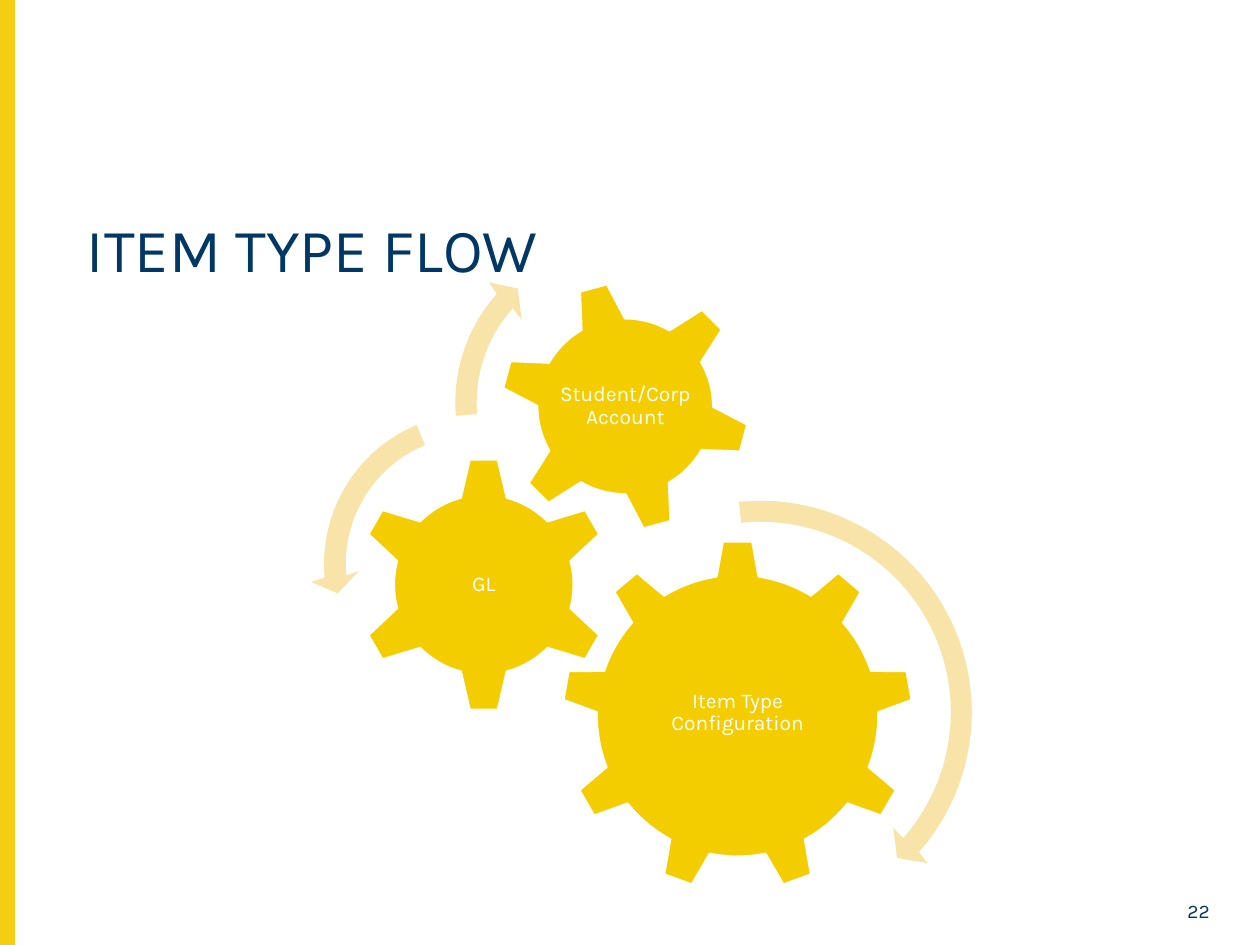
import math

import lxml.etree
import pptx
import pptx.util
import pptx.dml.color
import pptx.enum.shapes
import pptx.enum.text
import pptx.oxml.ns

Pt = pptx.util.Pt
Align = pptx.enum.text.PP_ALIGN
Anchor = pptx.enum.text.MSO_ANCHOR
qn = pptx.oxml.ns.qn

FONT = "Karla"
COLORS = {"bar": "F4CE12", "gear": "F4CD00", "arrow": "F8E3A8",
          "navy": "003764", "white": "FFFFFF"}

# Content: lengths in points, angles in degrees clockwise.
# root and tip give the distance from the centre and half the tooth width.
TITLE = "ITEM TYPE FLOW"
PAGE_NUMBER = "22"
GEARS = [
    {"text": "Item Type Configuration", "center": (421.5, 409), "size": (201.6, 200.2),
     "teeth": 9, "turn": 0, "root": (80.3, 11.9), "tip": (99.4, 8.3),
     "label": (121, 103), "label_rise": 1.8},
    {"text": "GL", "center": (276.5, 334.1), "size": (146.9, 146.2),
     "teeth": 6, "turn": 0, "root": (51.2, 13), "tip": (71.4, 7.9),
     "label": (72.7, 72), "label_rise": 0},
    {"text": "Student/Corp Account", "center": (357.3, 232.2), "size": (144, 142.6),
     "teeth": 6, "turn": -15, "root": (50.1, 12.7), "tip": (69.9, 7.9),
     "label": (80.6, 80), "label_rise": 0},
]
ARROWS = [
    {"center": (434.5, 407), "size": (258.5, 256.3), "radii": (120.8, 108.8),
     "angles": (264.2, 401.4), "head": [(529.9, 493.2), (512.6, 490.3), (510.5, 473)]},
    {"center": (271.1, 322.2), "size": (187.9, 186.5), "radii": (85.9, 73.5),
     "angles": (247.4, 174.8), "head": [(177.8, 332.6), (193, 339.1), (205.2, 326.2)]},
    {"center": (353.2, 230), "size": (202.3, 200.9), "radii": (93, 80.8),
     "angles": (175.3, 221.8), "head": [(279.4, 161.3), (295.9, 164.9), (298.1, 182.9)]},
]


def rgb(name):
    return pptx.dml.color.RGBColor.from_string(COLORS[name])


def write(shape, text, size, color, align=Align.LEFT, anchor=Anchor.TOP,
          spacing=None, insets=(7.2, 3.6)):
    frame = shape.text_frame
    frame.word_wrap = True
    frame.vertical_anchor = anchor
    frame.margin_left = frame.margin_right = Pt(insets[0])
    frame.margin_top = frame.margin_bottom = Pt(insets[1])
    paragraph = frame.paragraphs[0]
    paragraph.alignment = align
    paragraph.line_spacing = spacing
    run = paragraph.add_run()
    run.text = text
    run.font.name = FONT
    run.font.size = Pt(size)
    run.font.color.rgb = rgb(color)


def paint(shape, fill, line=None):
    shape.shadow.inherit = False
    shape.fill.solid()
    shape.fill.fore_color.rgb = rgb(fill)
    if line:
        shape.line.color.rgb = rgb(line)
        shape.line.width = Pt(1)
    else:
        shape.line.fill.background()


def polar(center, radius, angle):
    angle = math.radians(angle)
    return center[0] + radius * math.cos(angle), center[1] + radius * math.sin(angle)


def arc(center, radius, start, end):
    """A step to the start of the arc, then one Bezier step per part of it."""
    count = math.ceil(abs(end - start) / 75)
    part = (end - start) / count
    reach = 4 / 3 * math.tan(math.radians(part) / 4)
    steps = [[polar(center, radius, start)]]
    for index in range(count):
        a, b = start + index * part, start + (index + 1) * part
        first, last = polar(center, radius, a), polar(center, radius, b)
        steps.append([polar(first, radius * reach, a + 90),
                      polar(last, -radius * reach, b + 90), last])
    return steps


def gear_steps(center, teeth, root, tip):
    pitch = 360 / teeth
    root_radius, root_half = root
    root_angle = math.degrees(math.asin(root_half / root_radius))
    tip_angle = math.degrees(math.atan2(tip[1], tip[0]))
    steps = []
    for tooth in range(teeth):
        middle = tooth * pitch - 90
        steps += [[polar(center, math.hypot(*tip), middle + side * tip_angle)]
                  for side in (-1, 1)]
        steps += arc(center, root_radius, middle + root_angle, middle + pitch - root_angle)
    return steps


def add_outline(slide, steps, center, size):
    """Draw steps of one point (line) or three points (curve) in a centred frame."""
    ends = [(Pt(x), Pt(y)) for x, y in (step[-1] for step in steps)]
    builder = slide.shapes.build_freeform(*ends[0])
    builder.add_line_segments(ends[1:], close=True)
    shape = builder.convert_to_shape()
    left, top = (center[i] - size[i] / 2 for i in (0, 1))
    shape.left, shape.top, shape.width, shape.height = map(Pt, (left, top, *size))

    outline = next(shape.element.iter(qn("a:path")))
    outline.set("w", str(shape.width))
    outline.set("h", str(shape.height))
    for command, step in zip(list(outline), steps):
        for point in list(command):
            command.remove(point)
        if len(step) == 3:
            curve = lxml.etree.Element(qn("a:cubicBezTo"))
            outline.replace(command, curve)
            command = curve
        for x, y in step:
            lxml.etree.SubElement(command, qn("a:pt"),
                                  x=str(int(Pt(x - left))), y=str(int(Pt(y - top))))
    return shape


def main():
    presentation = pptx.Presentation()
    presentation.slide_width, presentation.slide_height = Pt(720), Pt(540)
    slide = presentation.slides.add_slide(presentation.slide_layouts[5])

    # Side bar
    bar = slide.shapes.add_shape(pptx.enum.shapes.MSO_SHAPE.RECTANGLE, 0, 0, Pt(8), Pt(540))
    paint(bar, "bar", "bar")

    # Title and page number
    title = slide.shapes.title
    title.left, title.top, title.width, title.height = Pt(42.5), Pt(122), Pt(656.6), Pt(62.6)
    write(title, TITLE, 35, "navy", spacing=0.9)
    number = slide.shapes.add_textbox(Pt(661.7), Pt(510.5), Pt(36.7), Pt(18.7))
    write(number, PAGE_NUMBER, 11, "navy", align=Align.RIGHT)

    # Gears with upright labels
    for gear in GEARS:
        center = gear["center"]
        steps = gear_steps(center, gear["teeth"], gear["root"], gear["tip"])
        shape = add_outline(slide, steps, center, gear["size"])
        shape.rotation = gear["turn"]
        paint(shape, "gear", "white")
        width, height = gear["label"]
        label = slide.shapes.add_textbox(
            Pt(center[0] - width / 2), Pt(center[1] - height / 2 - gear["label_rise"]),
            Pt(width), Pt(height))
        write(label, gear["text"], 12, "white", align=Align.CENTER,
              anchor=Anchor.MIDDLE, spacing=0.9, insets=(1.5, 1.5))

    # Curved arrows
    for arrow in ARROWS:
        center = arrow["center"]
        outer, inner = arrow["radii"]
        start, end = arrow["angles"]
        steps = (arc(center, outer, start, end) + [[point] for point in arrow["head"]]
                 + arc(center, inner, end, start))
        paint(add_outline(slide, steps, center, arrow["size"]), "arrow")

    presentation.save("out.pptx")


if __name__ == "__main__":
    main()
